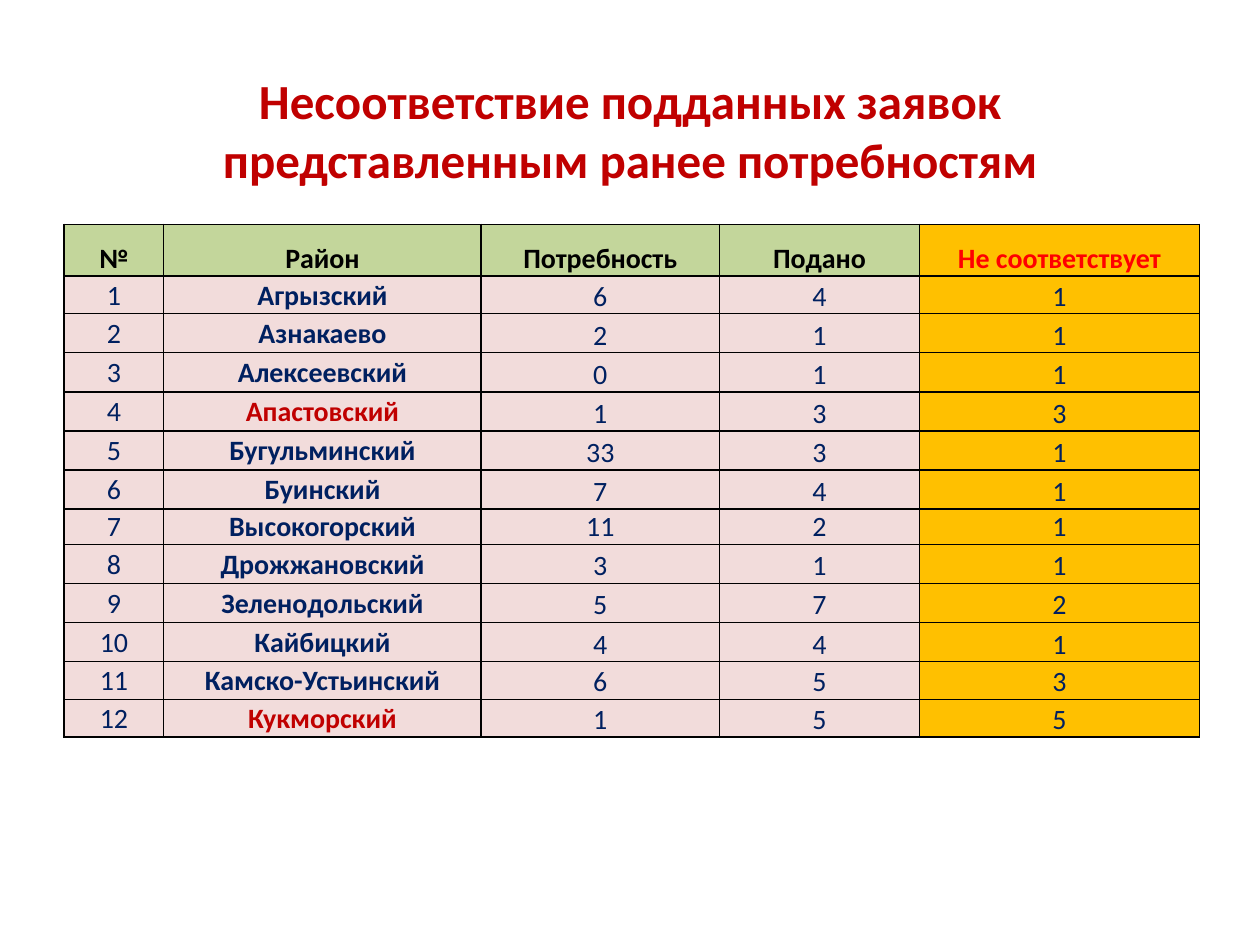
from lxml import etree
from pptx import Presentation
from pptx.dml.color import RGBColor
from pptx.enum.text import MSO_ANCHOR, PP_ALIGN
from pptx.oxml.ns import qn
from pptx.util import Inches, Pt

CENTER = PP_ALIGN.CENTER
MIDDLE, BOTTOM = MSO_ANCHOR.MIDDLE, MSO_ANCHOR.BOTTOM

FONT = "Calibri"
BLACK, NAVY, DARK_RED, RED = "000000", "002060", "C00000", "FF0000"
GREEN, PINK, AMBER = "C3D69B", "F2DCDB", "FFC000"

TITLE = "Несоответствие подданных заявок представленным ранее потребностям"
HEADER = ("№", "Район", "Потребность", "Подано", "Не соответствует")
DISTRICTS = (
    ("Агрызский", 6, 4, 1),
    ("Азнакаево", 2, 1, 1),
    ("Алексеевский", 0, 1, 1),
    ("Апастовский", 1, 3, 3),
    ("Бугульминский", 33, 3, 1),
    ("Буинский", 7, 4, 1),
    ("Высокогорский", 11, 2, 1),
    ("Дрожжановский", 3, 1, 1),
    ("Зеленодольский", 5, 7, 2),
    ("Кайбицкий", 4, 4, 1),
    ("Камско-Устьинский", 6, 5, 3),
    ("Кукморский", 1, 5, 5),
)
FLAGGED = {"Апастовский", "Кукморский"}
COL_WIDTHS = (0.79, 2.52, 1.89, 1.59, 2.22)
ROW_HEIGHTS = (0.41, 0.3, *[0.31] * 5, 0.24, *[0.31] * 3, 0.3, 0.3)


def rgb(value):
    return RGBColor.from_string(value)


def write(tf, text, size=16, color=NAVY, bold=False):
    p = tf.paragraphs[0]
    p.alignment = CENTER
    r = p.add_run()
    r.text = text
    r.font.name, r.font.size, r.font.bold = FONT, Pt(size), bold
    r.font.color.rgb = rgb(color)


def add_borders(cell, color=BLACK, width=1):
    tcPr = cell._tc.get_or_add_tcPr()
    for side in ("a:lnL", "a:lnR", "a:lnT", "a:lnB"):
        ln = etree.SubElement(tcPr, qn(side), w=str(Pt(width)))
        fill = etree.SubElement(ln, qn("a:solidFill"))
        etree.SubElement(fill, qn("a:srgbClr"), val=color)


class Deck:
    """Builds slides with one style and keeps the current slide."""

    def __init__(self):
        self.prs = Presentation()
        self.prs.slide_width, self.prs.slide_height = Inches(10), Inches(7.5)

    def slide(self):
        self.s = self.prs.slides.add_slide(self.prs.slide_layouts[5])

    def title(self, text, left, top, width, height):
        sp = self.s.shapes.title
        sp.left, sp.top = Inches(left), Inches(top)
        sp.width, sp.height = Inches(width), Inches(height)
        tf = sp.text_frame
        tf.word_wrap = True
        tf.vertical_anchor = MIDDLE
        write(tf, text, size=28, color=DARK_RED, bold=True)

    def table(self, left, top, widths, heights):
        table = self.s.shapes.add_table(
            len(heights), len(widths), Inches(left), Inches(top),
            Inches(sum(widths)), Inches(sum(heights))).table
        for col, width in zip(table.columns, widths):
            col.width = Inches(width)
        for row, height in zip(table.rows, heights):
            row.height = Inches(height)
        return table

    def cell(self, cell, text, fill, anchor=BOTTOM, **fmt):
        cell.margin_left = cell.margin_right = cell.margin_top = Inches(0.01)
        cell.margin_bottom = 0
        cell.vertical_anchor = anchor
        add_borders(cell)
        cell.fill.solid()
        cell.fill.fore_color.rgb = rgb(fill)
        write(cell.text_frame, text, **fmt)


def main():
    deck = Deck()
    deck.slide()
    deck.title(TITLE, 0.5, 0.44, 9, 1.18)
    table = deck.table(0.51, 1.78, COL_WIDTHS, ROW_HEIGHTS)
    last = len(HEADER) - 1
    for j, text in enumerate(HEADER):
        deck.cell(table.cell(0, j), text, AMBER if j == last else GREEN,
                  color=RED if j == last else BLACK, bold=True)
    for i, district in enumerate(DISTRICTS, 1):
        for j, value in enumerate((i, *district)):
            deck.cell(table.cell(i, j), str(value),
                      AMBER if j == last else PINK,
                      anchor=MIDDLE if j < 2 else BOTTOM,
                      color=DARK_RED if value in FLAGGED else NAVY,
                      bold=j == 1)
    deck.prs.save("out.pptx")


if __name__ == "__main__":
    main()
